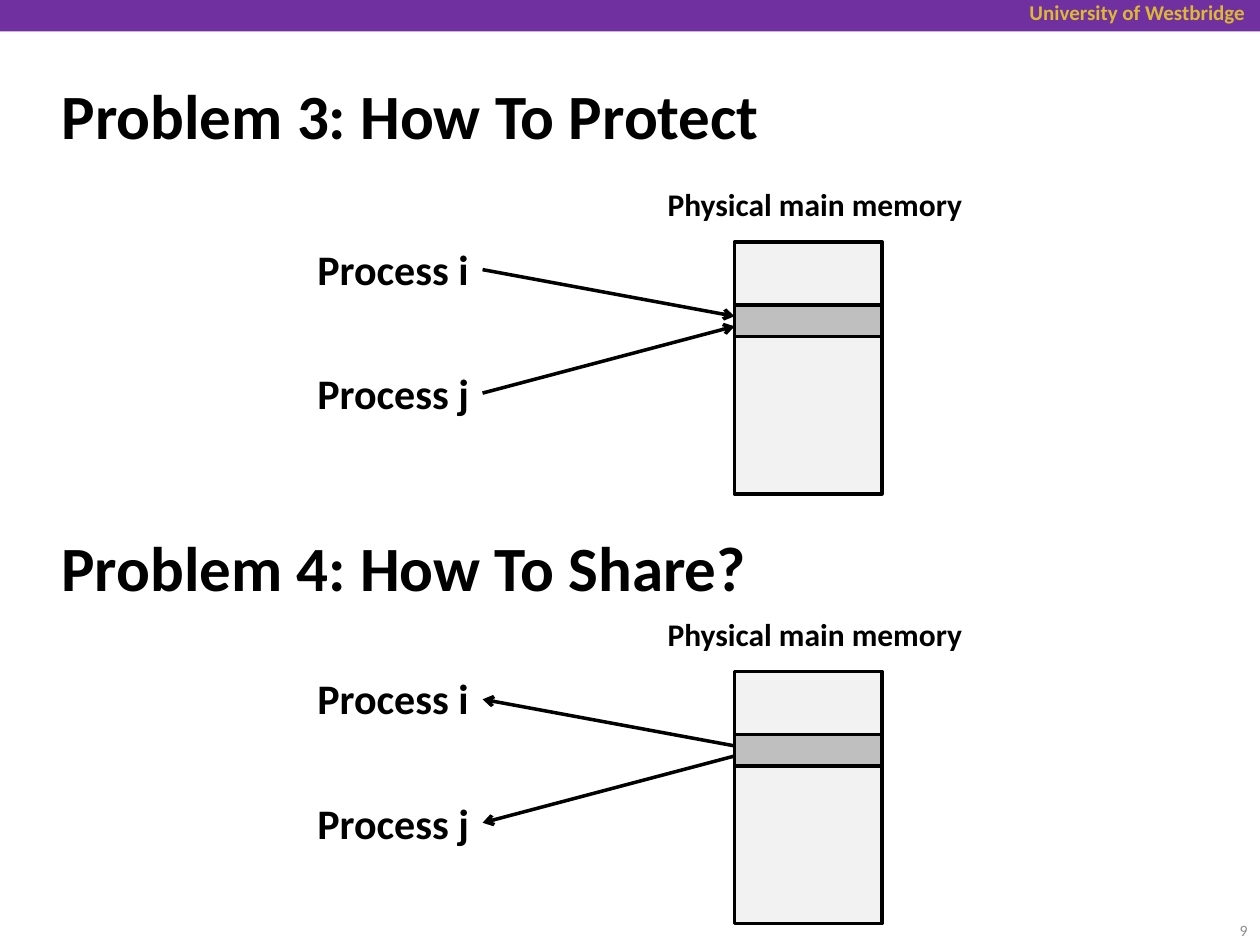
from dataclasses import dataclass

from lxml import etree
from pptx import Presentation
from pptx.dml.color import RGBColor
from pptx.enum.shapes import MSO_CONNECTOR, MSO_SHAPE
from pptx.enum.text import MSO_ANCHOR, MSO_AUTO_SIZE, PP_ALIGN
from pptx.oxml.ns import qn
from pptx.slide import Slide
from pptx.text.text import TextFrame
from pptx.util import Emu, Pt

EMU_PER_PX = 9144  # 100 px to the inch
TITLE_ONLY_LAYOUT = 5
RECTANGLE = MSO_SHAPE.RECTANGLE
STRAIGHT = MSO_CONNECTOR.STRAIGHT
LEFT, RIGHT = PP_ALIGN.LEFT, PP_ALIGN.RIGHT
TOP, MIDDLE = MSO_ANCHOR.TOP, MSO_ANCHOR.MIDDLE
NO_AUTOFIT = MSO_AUTO_SIZE.NONE
ARROW_AT_PROCESS, ARROW_AT_MEMORY = "a:headEnd", "a:tailEnd"


@dataclass(frozen=True)
class Theme:
    font: str = "Calibri"
    ink: str = "000000"
    banner: str = "7030A0"
    gold: str = "DCB834"
    page_number: str = "8C8C8C"
    memory: str = "F2F2F2"
    shared_block: str = "BFBFBF"
    title_size: int = 36
    process_size: int = 24
    caption_size: int = 18
    banner_size: int = 12
    page_number_size: int = 9
    line_width: int = 2


@dataclass(frozen=True)
class Box:
    left: int
    top: int
    width: int
    height: int

    def emu(self) -> tuple[Emu, ...]:
        return tuple(map(px, (self.left, self.top, self.width, self.height)))


@dataclass(frozen=True)
class Style:
    size: int
    color: str = "000000"
    bold: bool = True
    alignment: PP_ALIGN = LEFT
    anchor: MSO_ANCHOR = TOP
    wrap: bool = True


@dataclass(frozen=True)
class Process:
    """Offsets are measured from the top of the memory column."""
    name: str
    label_offset: int
    arrow_offset: int
    memory_offset: int


@dataclass(frozen=True)
class MemoryDiagram:
    top: int
    arrow_end: str


THEME = Theme()
TITLE = Style(THEME.title_size, THEME.ink, anchor=MIDDLE)
CAPTION = Style(THEME.caption_size, THEME.ink, wrap=False)
PROCESS = Style(THEME.process_size, THEME.ink, wrap=False)
BANNER = Style(THEME.banner_size, THEME.gold, alignment=RIGHT)
PAGE_NUMBER = Style(THEME.page_number_size, THEME.page_number, bold=False,
                    alignment=RIGHT, anchor=MIDDLE)

MEMORY_LEFT, MEMORY_WIDTH, MEMORY_HEIGHT = 583, 117, 200
BLOCK_OFFSET, BLOCK_HEIGHT = 50, 25
PROCESS_LEFT, PROCESS_RIGHT = 242, 383
PROCESSES = (
    Process("Process i", -4, 22, 59),
    Process("Process j", 95, 120, 67),
)
DIAGRAMS = (
    MemoryDiagram(192, ARROW_AT_MEMORY),
    MemoryDiagram(533, ARROW_AT_PROCESS),
)


def px(length: int) -> Emu:
    return Emu(length * EMU_PER_PX)


def write_text(text_frame: TextFrame, text: str, style: Style) -> None:
    text_frame.text = text
    text_frame.word_wrap = style.wrap
    text_frame.auto_size = NO_AUTOFIT
    text_frame.vertical_anchor = style.anchor
    paragraph = text_frame.paragraphs[0]
    paragraph.alignment = style.alignment
    font = paragraph.runs[0].font
    font.name = THEME.font
    font.size = Pt(style.size)
    font.bold = style.bold
    font.color.rgb = RGBColor.from_string(style.color)


def add_text(slide: Slide, box: Box, text: str, style: Style) -> None:
    write_text(slide.shapes.add_textbox(*box.emu()).text_frame, text, style)


def add_rectangle(slide: Slide, box: Box, fill: str, outlined: bool = True) -> None:
    shape = slide.shapes.add_shape(RECTANGLE, *box.emu())
    shape.shadow.inherit = False
    shape.fill.solid()
    shape.fill.fore_color.rgb = RGBColor.from_string(fill)
    if outlined:
        shape.line.color.rgb = RGBColor.from_string(THEME.ink)
        shape.line.width = Pt(THEME.line_width)
    else:
        shape.line.fill.background()


def add_arrow(slide: Slide, start: tuple[int, int], end: tuple[int, int],
              arrow_end: str) -> None:
    connector = slide.shapes.add_connector(STRAIGHT, *map(px, start + end))
    connector.line.color.rgb = RGBColor.from_string(THEME.ink)
    connector.line.width = Pt(THEME.line_width)
    properties = connector._element.spPr
    etree.SubElement(properties.find(qn("a:ln")), qn(arrow_end), type="arrow")
    etree.SubElement(properties, qn("a:effectLst"))


def add_diagram(slide: Slide, diagram: MemoryDiagram) -> None:
    top = diagram.top
    add_text(slide, Box(520, top - 50, 263, 40), "Physical main memory", CAPTION)
    add_rectangle(slide, Box(MEMORY_LEFT, top, MEMORY_WIDTH, MEMORY_HEIGHT),
                  THEME.memory)
    add_rectangle(slide, Box(MEMORY_LEFT, top + BLOCK_OFFSET, MEMORY_WIDTH,
                             BLOCK_HEIGHT), THEME.shared_block)
    for process in PROCESSES:
        label = Box(PROCESS_LEFT, top + process.label_offset,
                    PROCESS_RIGHT - PROCESS_LEFT, 50)
        add_text(slide, label, process.name, PROCESS)
        add_arrow(slide, (PROCESS_RIGHT, top + process.arrow_offset),
                  (MEMORY_LEFT, top + process.memory_offset), diagram.arrow_end)


def main() -> None:
    presentation = Presentation()
    presentation.slide_width, presentation.slide_height = px(1000), px(750)
    slide = presentation.slides.add_slide(
        presentation.slide_layouts[TITLE_ONLY_LAYOUT])

    add_rectangle(slide, Box(0, 0, 1000, 25), THEME.banner, outlined=False)
    add_text(slide, Box(733, -5, 265, 30), "University of Westbridge", BANNER)

    title = slide.shapes.title
    title.left, title.top, title.width, title.height = Box(39, 49, 919, 83).emu()
    write_text(title.text_frame, "Problem 3: How To Protect", TITLE)
    add_text(slide, Box(39, 408, 830, 83), "Problem 4: How To Share?", TITLE)

    for diagram in DIAGRAMS:
        add_diagram(slide, diagram)
    add_text(slide, Box(933, 718, 67, 40), "9", PAGE_NUMBER)

    presentation.save("out.pptx")


if __name__ == "__main__":
    main()
